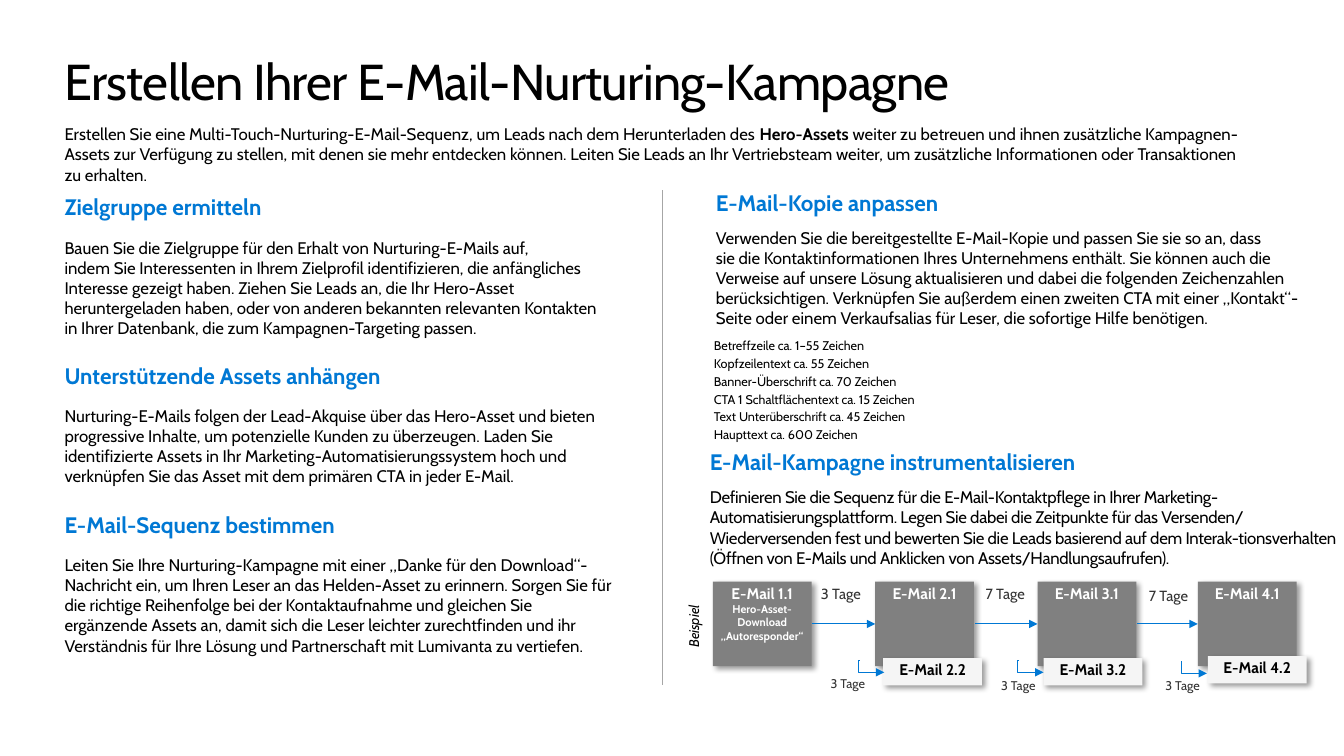
from lxml import etree
from pptx import Presentation
from pptx.dml.color import RGBColor
from pptx.enum.shapes import MSO_CONNECTOR as CONN, MSO_SHAPE
from pptx.enum.text import MSO_ANCHOR as ANCHOR, MSO_AUTO_SIZE, PP_ALIGN as ALIGN
from pptx.oxml import parse_xml
from pptx.oxml.ns import nsdecls, qn
from pptx.util import Inches, Pt

BLUE, BLACK, GRAY, PALE, DARK = "0078D4", "000000", "808080", "F5F5F5", "333333"
rgb = RGBColor.from_string


def write(tf, lines, inset=0.0, anchor=ANCHOR.TOP, align=ALIGN.LEFT):
    """Fill a text frame with (text, size, colour, bold) paragraphs."""
    tf.word_wrap = True
    tf.auto_size = MSO_AUTO_SIZE.NONE
    tf.vertical_anchor = anchor
    tf.margin_left = tf.margin_right = tf.margin_top = tf.margin_bottom = Inches(inset)
    for i, (text, size, color, bold) in enumerate(lines):
        p = tf.add_paragraph() if i else tf.paragraphs[0]
        p.text = text
        p.alignment = align
        p.font.name, p.font.size, p.font.bold = "Cabin", Pt(size), bold
        p.font.color.rgb = rgb(color)
    return tf.paragraphs


def connect(kind, x1, y1, x2, y2, color=BLUE, width=0.75, arrow=True):
    c = s.shapes.add_connector(kind, Inches(x1), Inches(y1), Inches(x2), Inches(y2))
    c.line.color.rgb = rgb(color)
    c.line.width = Pt(width)
    if arrow:
        etree.SubElement(c.line._get_or_add_ln(), qn("a:tailEnd"), type="triangle")
    etree.SubElement(c._element.spPr, qn("a:effectLst"))
    return c


prs = Presentation()
prs.slide_width, prs.slide_height = Inches(13.33), Inches(7.5)
s = prs.slides.add_slide(prs.slide_layouts[5])

# Title and introduction
title = s.shapes.title
title.left, title.top, title.width, title.height = map(Inches, (0.64, 0.5, 12.05, 0.61))
p = write(title.text_frame, [("Erstellen Ihrer E-Mail-Nurturing-Kampagne", 36, BLACK, False)])[0]
p.runs[0]._r.get_or_add_rPr().set("spc", "-50")

intro = s.shapes.add_textbox(*map(Inches, (0.64, 1.23, 11.82, 0.61)))
p = write(intro.text_frame, [(
    "Erstellen Sie eine Multi-Touch-Nurturing-E-Mail-Sequenz, um Leads nach dem Herunterladen des ",
    12, BLACK, False)])[0]
r = p.add_run()
r.text = "Hero-Assets"
r.font.bold = True
p.add_run().text = (
    " weiter zu betreuen und ihnen zusätzliche Kampagnen-Assets zur Verfügung zu stellen, mit denen "
    "sie mehr entdecken können. Leiten Sie Leads an Ihr Vertriebsteam weiter, um zusätzliche "
    "Informationen oder Transaktionen zu erhalten.")

connect(CONN.STRAIGHT, 6.57, 1.89, 6.57, 6.8, "A6A6A6", 0.5, arrow=False)

# Sections: box, heading line spacing, space after heading, body tracking, heading, body
sections = [
    ((0.64, 1.95, 5.4, 1.66), 0.9, 12, 0, "Zielgruppe ermitteln",
     "Bauen Sie die Zielgruppe für den Erhalt von Nurturing-E-Mails auf,\n"
     "indem Sie Interessenten in Ihrem Zielprofil identifizieren, die anfängliches Interesse gezeigt "
     "haben. Ziehen Sie Leads an, die Ihr Hero-Asset heruntergeladen haben, oder von anderen bekannten "
     "relevanten Kontakten in Ihrer Datenbank, die zum Kampagnen-Targeting passen."),
    ((0.64, 3.59, 5.46, 1.51), 1.0, 12, 0, "Unterstützende Assets anhängen",
     "Nurturing-E-Mails folgen der Lead-Akquise über das Hero-Asset und bieten progressive Inhalte, um "
     "potenzielle Kunden zu überzeugen. Laden Sie identifizierte Assets in Ihr "
     "Marketing-Automatisierungssystem hoch und verknüpfen Sie das Asset mit dem primären CTA in jeder "
     "E-Mail."),
    ((0.64, 5.07, 5.44, 1.45), 1.0, 12, 0, "E-Mail-Sequenz bestimmen",
     "Leiten Sie Ihre Nurturing-Kampagne mit einer „Danke für den Download“-Nachricht ein, um Ihren "
     "Leser an das Helden-Asset zu erinnern. Sorgen Sie für die richtige Reihenfolge bei der "
     "Kontaktaufnahme und gleichen Sie ergänzende Assets an, damit sich die Leser leichter "
     "zurechtfinden und ihr Verständnis für Ihre Lösung und Partnerschaft mit Lumivanta zu vertiefen."),
    ((7.1, 1.88, 6.07, 1.66), 1.0, 8, 0, "E-Mail-Kopie anpassen",
     "Verwenden Sie die bereitgestellte E-Mail-Kopie und passen Sie sie so an, dass\n"
     "sie die Kontaktinformationen Ihres Unternehmens enthält. Sie können auch die Verweise auf unsere "
     "Lösung aktualisieren und dabei die folgenden Zeichenzahlen berücksichtigen. Verknüpfen Sie "
     "außerdem einen zweiten CTA mit einer „Kontakt“-Seite oder einem Verkaufsalias für Leser, die "
     "sofortige Hilfe benötigen."),
    ((7.04, 4.48, 6.3, 1.4), 0.9, 8, -20, "E-Mail-Kampagne instrumentalisieren",
     "Definieren Sie die Sequenz für die E-Mail-Kontaktpflege in Ihrer "
     "Marketing-Automatisierungsplattform. Legen Sie dabei die Zeitpunkte für das Versenden/\n"
     "Wiederversenden fest und bewerten Sie die Leads basierend auf dem Interak-tionsverhalten "
     "(Öffnen von E-Mails und Anklicken von Assets/Handlungsaufrufen)."),
]
for box, spacing, after, tracking, heading, body in sections:
    sp = s.shapes.add_textbox(*map(Inches, box))
    head, text = write(sp.text_frame, [(heading, 16, BLUE, True), (body, 12, BLACK, False)])
    head.line_spacing = spacing
    head.space_after = Pt(after)
    if tracking:
        for r in text.runs:
            r._r.get_or_add_rPr().set("spc", str(tracking))

# Character limits
limits = ["Betreffzeile ca. 1–55 Zeichen", "Kopfzeilentext ca. 55 Zeichen",
          "Banner-Überschrift ca. 70 Zeichen", "CTA 1 Schaltflächentext ca. 15 Zeichen",
          "Text Unterüberschrift ca. 45 Zeichen", "Haupttext ca. 600 Zeichen"]
table = s.shapes.add_table(len(limits), 1, *map(Inches, (7.07, 3.35, 2.74, 1.06))).table
table.first_row = table.horz_banding = False
for row, limit in zip(table.rows, limits):
    row.height = Inches(1.06 / len(limits))
    cell = row.cells[0]
    cell.margin_left = cell.margin_right = cell.margin_top = cell.margin_bottom = Inches(0.01)
    p = cell.text_frame.paragraphs[0]
    p.text = limit
    p.font.name, p.font.size = "Cabin", Pt(9)
    p.font.color.rgb = rgb(BLACK)
    tcPr = cell._tc.get_or_add_tcPr()
    for side in ("lnL", "lnR", "lnT", "lnB"):
        tcPr.append(parse_xml(
            f'<a:{side} {nsdecls("a")} w="12700"><a:solidFill><a:srgbClr val="FFFFFF"/>'
            f'</a:solidFill></a:{side}>'))
    cell.fill.background()

# Example sequence
sp = s.shapes.add_textbox(*map(Inches, (6.57, 6.03, 0.62, 0.17)))
sp.rotation = 270
write(sp.text_frame, [("Beispiel", 10, BLACK, False)])[0].font.italic = True

mails = [(7.07, 5.77, 0.84, GRAY, [("E-Mail 1.1", 11, "FFFFFF", True),
                                   ("Hero-Asset-Download „Autoresponder“", 8, "FFFFFF", True)])]
for i, x in enumerate((8.68, 10.29, 11.88), 2):
    mails.append((x, 5.77, 0.84, GRAY, [(f"E-Mail {i}.1", 11, "FFFFFF", True)]))
for i, (x, y) in enumerate(((8.76, 6.53), (10.35, 6.53), (11.98, 6.51)), 2):
    mails.append((x, y, 0.27, PALE, [(f"E-Mail {i}.2", 11, BLACK, True)]))
for x, y, height, color, lines in mails:
    sp = s.shapes.add_shape(MSO_SHAPE.RECTANGLE, *map(Inches, (x, y, 0.98, height)))
    sp.fill.solid()
    sp.fill.fore_color.rgb = rgb(color)
    sp.line.fill.background()
    sp._element.spPr.append(parse_xml(
        f'<a:effectLst {nsdecls("a")}><a:outerShdw blurRad="50800" dist="38100" dir="2700000" '
        'algn="tl" rotWithShape="0"><a:srgbClr val="000000"><a:alpha val="40000"/></a:srgbClr>'
        '</a:outerShdw></a:effectLst>'))
    write(sp.text_frame, lines, 0.02, align=ALIGN.CENTER)

for x1, x2 in ((8.05, 8.68), (9.67, 10.29), (11.28, 11.88)):
    connect(CONN.STRAIGHT, x1, 6.19, x2, 6.19)
for x, y in ((8.52, 6.55), (10.1, 6.55), (11.72, 6.56)):
    c = connect(CONN.ELBOW, x, y, x + 0.25, y + 0.12)
    guides = c._element.spPr.find(qn("a:prstGeom")).get_or_add_avLst()
    etree.SubElement(guides, qn("a:gd"), name="adj1", fmla="val -1700")

delays = [(8.06, 5.77, "3 Tage", 10.5), (9.69, 5.77, "7 Tage", 10.5), (11.31, 5.79, "7 Tage", 10.5),
          (8.13, 6.66, "3 Tage", 9), (9.82, 6.68, "3 Tage", 9), (11.45, 6.68, "3 Tage", 9)]
for x, y, delay, size in delays:
    sp = s.shapes.add_textbox(*map(Inches, (x, y, 0.56, 0.24)))
    write(sp.text_frame, [(delay, size, DARK, False)], 0.02, ANCHOR.MIDDLE, ALIGN.CENTER)

prs.save("out.pptx")
